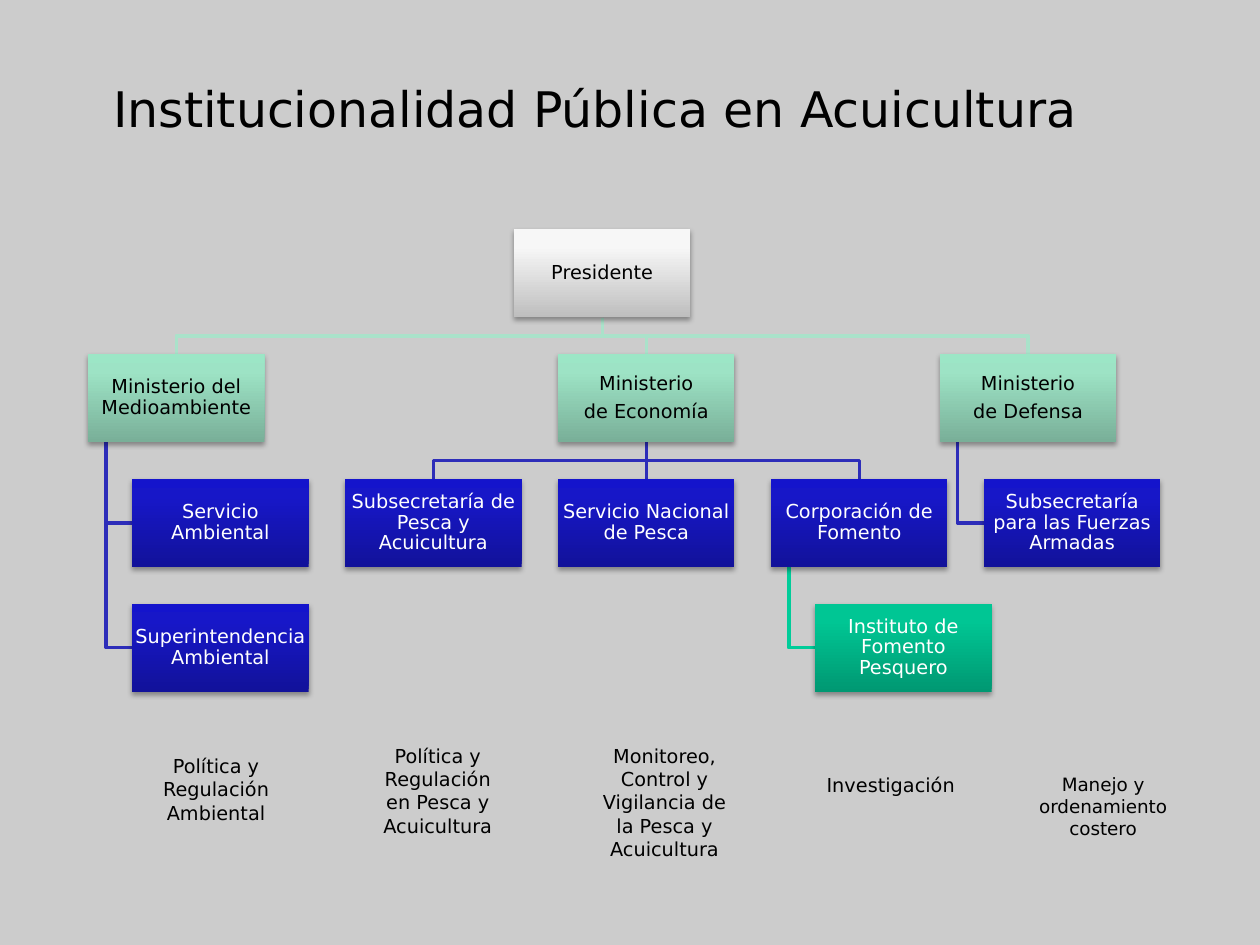
from lxml import etree
from pptx import Presentation
from pptx.dml.color import RGBColor
from pptx.enum import shapes, text
from pptx.oxml import ns, parse_xml
from pptx.util import Inches, Pt

FONT = "DejaVu Sans"
COLORS = {
    "page": "CCCCCC", "dark": "000000", "light": "FFFFFF",
    "mint line": "AAE2CA", "blue line": "2D2DB9", "green line": "00CC99",
}
# Gradient colours from bottom to top, then the text colour
STYLES = {
    "grey": ("BEBEBE", "F7F7F7", "F8F8F8", "dark"),
    "mint": ("79AF98", "9DE3C5", "9CE6C6", "dark"),
    "blue": ("12129A", "1717C8", "1414CC", "light"),
    "green": ("009872", "00C694", "00C795", "light"),
}
STOPS = (0, 80, 100)

# Chart grid, in inches
LEFT, TOP = 1.05, 1.82
COLUMN, ROW = 1.69, 0.99
WIDTH, HEIGHT = 1.4, 0.7
STEM = WIDTH / 10  # where a side branch leaves its parent

# name: column, row, shift in quarter boxes, style, lines
UNITS = {
    "president": (2, 0, -1, "grey", "Presidente"),
    "environment": (0, 1, -1, "mint", "Ministerio del Medioambiente"),
    "service": (0, 2, 0, "blue", "Servicio Ambiental"),
    "oversight": (0, 3, 0, "blue", "Superintendencia Ambiental"),
    "economy": (2, 1, 0, "mint", "Ministerio\nde Economía"),
    "fisheries": (1, 2, 0, "blue", "Subsecretaría de Pesca y Acuicultura"),
    "national": (2, 2, 0, "blue", "Servicio Nacional de Pesca"),
    "development": (3, 2, 0, "blue", "Corporación de Fomento"),
    "institute": (3, 3, 1, "green", "Instituto de Fomento Pesquero"),
    "defence": (4, 1, -1, "mint", "Ministerio\nde Defensa"),
    "forces": (4, 2, 0, "blue", "Subsecretaría para las Fuerzas Armadas"),
}
# parent, children, line colour
TREES = [
    ("president", ("environment", "economy", "defence"), "mint line"),
    ("economy", ("fisheries", "national", "development"), "blue line"),
]
SIDE_BRANCHES = [
    ("environment", ("service", "oversight"), "blue line"),
    ("development", ("institute",), "green line"),
    ("defence", ("forces",), "blue line"),
]
# left, top, width, height, size, text
CAPTIONS = [
    (1.09, 5.94, 1.25, 0.66, 11, "Política y Regulación Ambiental"),
    (2.89, 5.86, 1.17, 0.84, 11, "Política y Regulación en Pesca y Acuicultura"),
    (4.61, 5.86, 1.33, 1.03, 11,
     "Monitoreo, Control y Vigilancia de la Pesca y Acuicultura"),
    (6.33, 6.09, 1.48, 0.29, 11, "Investigación"),
    (8.13, 6.09, 1.25, 0.63, 10.5, "Manejo y ordenamiento costero"),
]


def color(name):
    return RGBColor.from_string(COLORS[name])


def corner(unit):
    column, row, shift = UNITS[unit][:3]
    return LEFT + column * COLUMN + shift * WIDTH / 4, TOP + row * ROW


def write(frame, words, size, ink):
    frame.word_wrap = True
    frame.text = words
    for para in frame.paragraphs:
        para.alignment = text.PP_ALIGN.CENTER
        para.font.name = FONT
        para.font.size = Pt(size)
        para.font.color.rgb = color(ink)


def paint_gradient(box, hexes):
    box.fill.gradient()
    box.fill.gradient_angle = 90
    stops = box._element.spPr.find(".//" + ns.qn("a:gsLst"))
    for stop in list(stops):
        stops.remove(stop)
    for share, value in zip(STOPS, hexes):
        stops.append(parse_xml(
            f'<a:gs {ns.nsdecls("a")} pos="{share * 1000}">'
            f'<a:srgbClr val="{value}"/></a:gs>'))


def add_shadow(box):
    box.shadow.inherit = False
    effects = box._element.spPr.find(ns.qn("a:effectLst"))
    effects.append(parse_xml(
        f'<a:outerShdw {ns.nsdecls("a")} blurRad="{Pt(3.1)}" dist="{Pt(1.8)}" '
        'dir="5400000" rotWithShape="0"><a:srgbClr val="000000">'
        '<a:alpha val="35000"/></a:srgbClr></a:outerShdw>'))


def add_unit(page, unit):
    style, words = UNITS[unit][3:]
    *hexes, ink = STYLES[style]
    x, y = corner(unit)
    box = page.shapes.add_shape(shapes.MSO_SHAPE.RECTANGLE, Inches(x), Inches(y),
                                Inches(WIDTH), Inches(HEIGHT))
    paint_gradient(box, hexes)
    box.line.fill.background()
    add_shadow(box)
    frame = box.text_frame
    frame.margin_left = frame.margin_right = Inches(0.01)
    frame.margin_top = frame.margin_bottom = Inches(0.01)
    frame.vertical_anchor = text.MSO_ANCHOR.MIDDLE
    write(frame, words, 11, ink)
    for para in frame.paragraphs:
        para.line_spacing = 0.9
        para.space_after = Pt(4.5)


def add_branch(page, points, ink):
    ends = [(Inches(x), Inches(y)) for x, y in points]
    if len({x for x, _ in ends}) == 1:
        line = page.shapes.add_connector(shapes.MSO_CONNECTOR.STRAIGHT,
                                         *ends[0], *ends[-1])
        etree.SubElement(line._element.spPr, ns.qn("a:effectLst"))
    else:
        builder = page.shapes.build_freeform(*ends[0])
        builder.add_line_segments(ends[1:], close=False)
        line = builder.convert_to_shape()
        line.fill.background()
        line.shadow.inherit = False
    line.line.color.rgb = color(ink)
    line.line.width = Pt(2)


def add_branches(page):
    # Children below their parent, reached from its middle
    for parent, children, ink in TREES:
        x, y = corner(parent)
        start, bottom = x + WIDTH / 2, y + HEIGHT
        for child in children:
            child_x, child_y = corner(child)
            end, middle = child_x + WIDTH / 2, (bottom + child_y) / 2
            add_branch(page, [(start, bottom), (start, middle),
                              (end, middle), (end, child_y)], ink)
    # Children indented beside a stem
    for parent, children, ink in SIDE_BRANCHES:
        x, y = corner(parent)
        for child in children:
            child_x, child_y = corner(child)
            middle = child_y + HEIGHT / 2
            add_branch(page, [(x + STEM, y + HEIGHT), (x + STEM, middle),
                              (child_x, middle)], ink)


def add_title(page, words):
    title = page.shapes.title
    title.left, title.top = Inches(0.47), Inches(0.23)
    title.width, title.height = Inches(8.5), Inches(1.25)
    title.text_frame.vertical_anchor = text.MSO_ANCHOR.MIDDLE
    write(title.text_frame, words, 28, "dark")


def add_caption(page, left, top, width, height, size, words):
    box = page.shapes.add_textbox(*map(Inches, (left, top, width, height)))
    write(box.text_frame, words, size, "dark")
    box.text_frame.auto_size = text.MSO_AUTO_SIZE.SHAPE_TO_FIT_TEXT


def main():
    deck = Presentation()
    deck.slide_width, deck.slide_height = Inches(10), Inches(7.5)
    page = deck.slides.add_slide(deck.slide_layouts[5])
    page.background.fill.solid()
    page.background.fill.fore_color.rgb = color("page")

    add_title(page, "Institucionalidad Pública en Acuicultura")
    # Organisation chart: lines first, boxes over them
    add_branches(page)
    for unit in UNITS:
        add_unit(page, unit)
    # Duties under the chart
    for caption in CAPTIONS:
        add_caption(page, *caption)
    deck.save("out.pptx")


if __name__ == "__main__":
    main()
